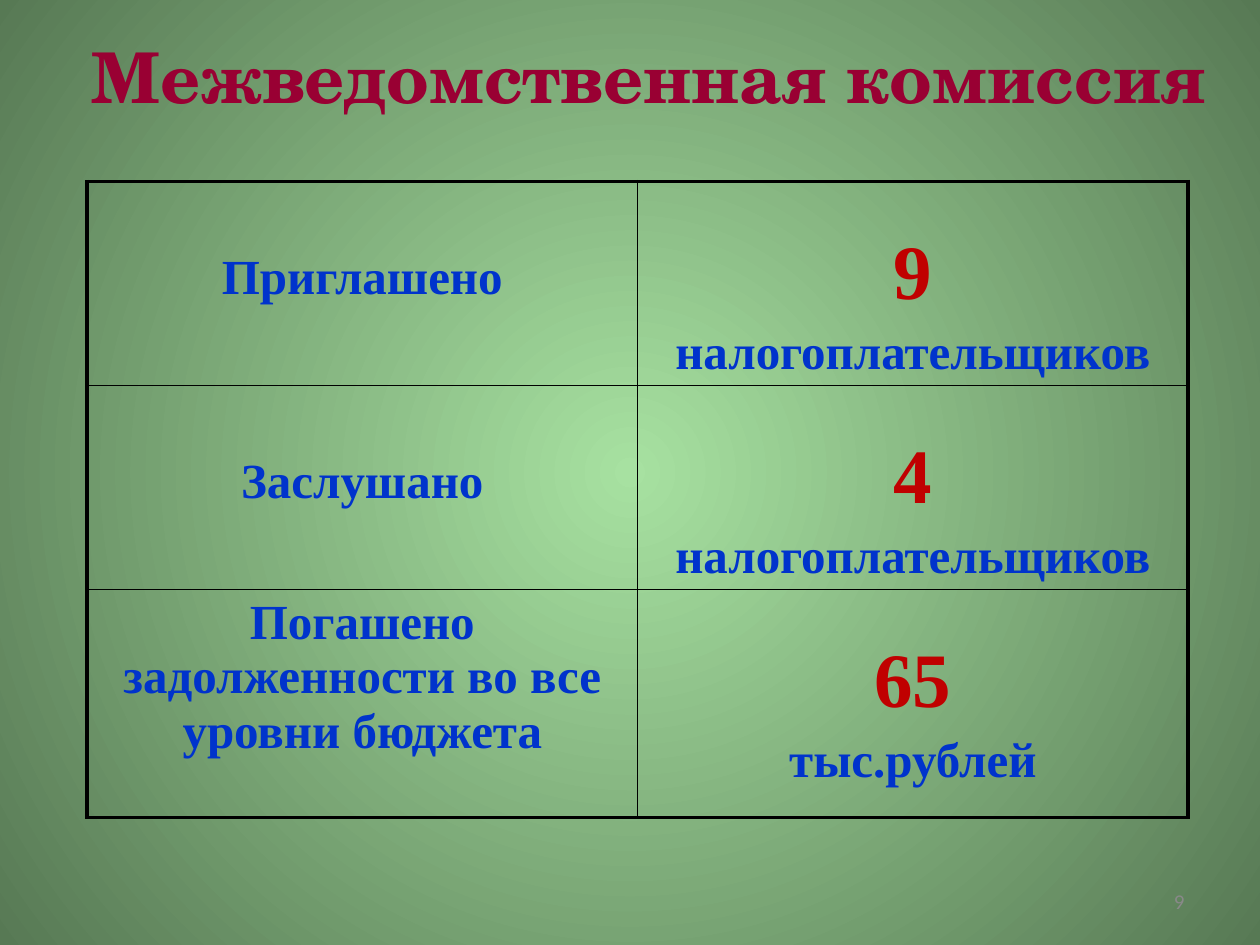
from dataclasses import dataclass

from lxml.etree import SubElement
from pptx import Presentation
from pptx.dml.color import RGBColor
from pptx.enum.text import MSO_ANCHOR, PP_ALIGN
from pptx.oxml import parse_xml
from pptx.oxml.ns import qn
from pptx.slide import Slide
from pptx.table import _Cell as Cell
from pptx.text.text import TextFrame
from pptx.util import Inches, Pt

SLIDE_WIDTH, SLIDE_HEIGHT = Inches(10), Inches(7.5)
DRAWING_NAMESPACE = "http://schemas.openxmlformats.org/drawingml/2006/main"


@dataclass(frozen=True)
class Theme:
    glow: str = "A7E1A1"
    edge: str = "577954"
    title: str = "990033"
    label: str = "0033CC"
    figure: str = "C00000"
    page: str = "898989"
    border: str = "000000"
    title_font: str = "TeX Gyre Schola"
    table_font: str = "Times New Roman"
    page_font: str = "Calibri"
    title_size: float = 40
    label_size: float = 28
    figure_size: float = 44
    page_size: float = 12
    outer_line: float = 2.25
    inner_line: float = 1


@dataclass(frozen=True)
class Box:
    """A rectangle in shares of the slide's size."""
    left: float
    top: float
    width: float
    height: float

    def lengths(self) -> tuple[int, int, int, int]:
        return (int(self.left * SLIDE_WIDTH), int(self.top * SLIDE_HEIGHT),
                int(self.width * SLIDE_WIDTH), int(self.height * SLIDE_HEIGHT))


@dataclass(frozen=True)
class ResultRow:
    label: str
    figure: str
    unit: str
    height: float
    label_offset: float


THEME = Theme()
TITLE_BOX = Box(0.054, 0, 0.922, 0.159)
TABLE_BOX = Box(0.069, 0.192, 0.874, 0.672)
PAGE_BOX = Box(0.717, 0.927, 0.233, 0.053)
FIGURE_OFFSET = 0.39
ROWS = [
    ResultRow("Приглашено", "9", "налогоплательщиков", 1.62, 0.55),
    ResultRow("Заслушано", "4", "налогоплательщиков", 1.62, 0.55),
    ResultRow("Погашено задолженности во все уровни бюджета", "65", "тыс.рублей", 1.81, 0.05),
]


def write(frame: TextFrame, text: str, *, font: str, size: float, color: str,
          bold: bool = True, align: PP_ALIGN = PP_ALIGN.CENTER,
          space_before: float = 0) -> None:
    """Fill the first paragraph if it is free, otherwise append one."""
    paragraph = frame.paragraphs[0] if not frame.text else frame.add_paragraph()
    paragraph.alignment = align
    paragraph.space_before = Pt(space_before)
    run = paragraph.add_run()
    run.text = text
    run.font.name = font
    run.font.size = Pt(size)
    run.font.bold = bold
    run.font.color.rgb = RGBColor.from_string(color)


def paint_background(slide: Slide) -> None:
    fill = slide.background.fill
    fill.gradient()
    for stop, color, position in zip(fill.gradient_stops, (THEME.glow, THEME.edge), (0, 1)):
        stop.color.rgb = RGBColor.from_string(color)
        stop.position = position
    gradient = slide.element.find(".//" + qn("a:gradFill"))
    gradient.remove(gradient.find(qn("a:lin")))
    circle = SubElement(gradient, qn("a:path"), path="circle")
    SubElement(circle, qn("a:fillToRect"), l="50000", t="50000", r="50000", b="50000")


def set_borders(cell: Cell, **widths: float) -> None:
    """Draw the sides L, R, T and B, given in that order, in points."""
    properties = cell._tc.get_or_add_tcPr()
    for index, (side, width) in enumerate(widths.items()):
        properties.insert(index, parse_xml(
            f'<a:ln{side} xmlns:a="{DRAWING_NAMESPACE}" w="{Pt(width)}">'
            f'<a:solidFill><a:srgbClr val="{THEME.border}"/></a:solidFill></a:ln{side}>'))


def prepare_cell(cell: Cell, offset: float, **borders: float) -> TextFrame:
    cell.fill.background()
    cell.vertical_anchor = MSO_ANCHOR.TOP
    cell.margin_top = Inches(offset)
    cell.margin_bottom = Inches(0.04)
    set_borders(cell, **borders)
    return cell.text_frame


def add_results(slide: Slide, rows: list[ResultRow]) -> None:
    table = slide.shapes.add_table(len(rows), 2, *TABLE_BOX.lengths()).table
    table.first_row = table.horz_banding = False
    outer, inner = THEME.outer_line, THEME.inner_line
    label_format = dict(font=THEME.table_font, size=THEME.label_size, color=THEME.label)
    for index, row in enumerate(rows):
        table.rows[index].height = Inches(row.height)
        top = outer if index == 0 else inner
        bottom = outer if index == len(rows) - 1 else inner
        label = prepare_cell(table.cell(index, 0), row.label_offset,
                             L=outer, R=inner, T=top, B=bottom)
        write(label, row.label, **label_format)
        result = prepare_cell(table.cell(index, 1), FIGURE_OFFSET,
                              L=inner, R=outer, T=top, B=bottom)
        write(result, row.figure, font=THEME.table_font,
              size=THEME.figure_size, color=THEME.figure)
        write(result, row.unit, space_before=0.2 * THEME.label_size, **label_format)


def add_title(slide: Slide, text: str) -> None:
    title = slide.shapes.title
    title.left, title.top, title.width, title.height = TITLE_BOX.lengths()
    title.text_frame.vertical_anchor = MSO_ANCHOR.MIDDLE
    write(title.text_frame, text, font=THEME.title_font,
          size=THEME.title_size, color=THEME.title)


def add_page_number(slide: Slide, number: str) -> None:
    frame = slide.shapes.add_textbox(*PAGE_BOX.lengths()).text_frame
    frame.word_wrap = True
    frame.vertical_anchor = MSO_ANCHOR.MIDDLE
    write(frame, number, font=THEME.page_font, size=THEME.page_size,
          color=THEME.page, bold=False, align=PP_ALIGN.RIGHT)


def main() -> None:
    presentation = Presentation()
    presentation.slide_width, presentation.slide_height = SLIDE_WIDTH, SLIDE_HEIGHT
    slide = presentation.slides.add_slide(presentation.slide_layouts.get_by_name("Title Only"))
    paint_background(slide)
    add_title(slide, "Межведомственная комиссия")
    add_results(slide, ROWS)
    add_page_number(slide, "9")
    presentation.save("out.pptx")


if __name__ == "__main__":
    main()
